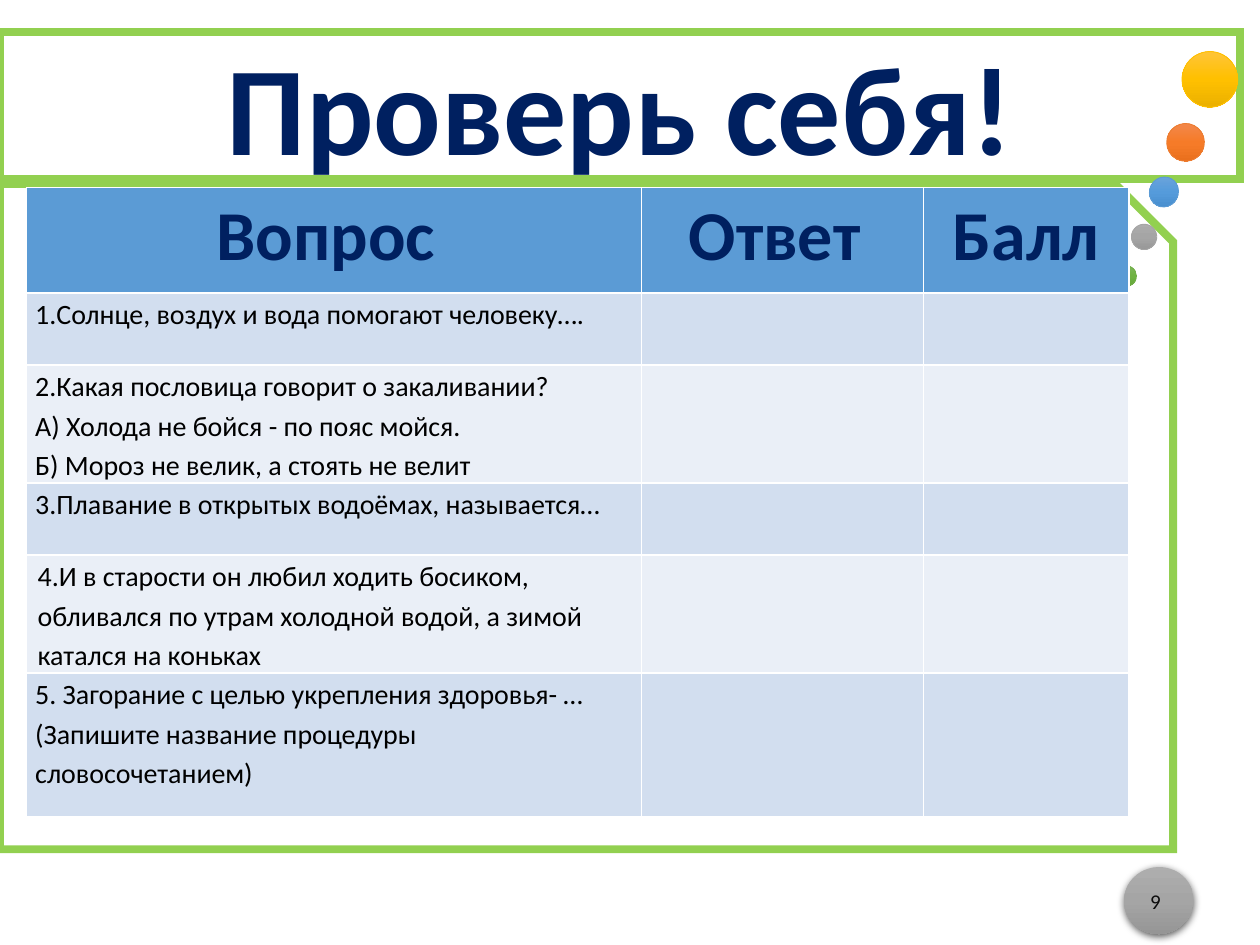
from dataclasses import dataclass

import pptx
import pptx.dml.color
import pptx.enum.shapes
import pptx.enum.text
import pptx.oxml
import pptx.oxml.ns
import pptx.util
from pptx.util import Cm

SHAPE = pptx.enum.shapes.MSO_SHAPE
ALIGN = pptx.enum.text.PP_ALIGN
ANCHOR = pptx.enum.text.MSO_ANCHOR


@dataclass(frozen=True)
class Theme:
    font: str = "Calibri"
    navy: str = "002060"
    black: str = "000000"
    page_ink: str = "0D0D0D"
    white: str = "FFFFFF"
    frame: str = "92D050"
    header: str = "5B9BD5"
    bands: tuple = ("D2DEEF", "EAEFF7")
    grey: tuple = ("AFAFAF", "A5A5A5", "939393")
    title_size: int = 72
    header_size: int = 40
    body_size: int = 16
    page_size: int = 12


THEME = Theme()

QUESTIONS = [
    ["1.Солнце, воздух и вода помогают человеку…."],
    ["2.Какая пословица говорит о закаливании?",
     "А) Холода не бойся - по пояс мойся.",
     "Б) Мороз не велик, а стоять не велит"],
    ["3.Плавание в открытых водоёмах, называется…"],
    ["4.И в старости он любил ходить босиком, обливался по утрам "
     "холодной водой, а зимой катался на коньках"],
    ["5. Загорание с целью укрепления здоровья- …",
     "(Запишите название процедуры словосочетанием)"],
]
INDENTED_QUESTION = 4
HEADINGS = ["Вопрос ", "Ответ ", "Балл"]
COLUMN_WIDTHS = [12.4, 5.69, 4.14]
ROW_HEIGHTS = [2.13, 1.45, 2.31, 1.45, 2.24, 2.9]

DOTS = [
    (23.83, 1.04, 1.12, 1.12, ("FFC64B", "FFC000", "E3AB00"), "FFC000"),
    (23.52, 2.49, 0.76, 0.76, ("F18C57", "F67B28", "E56C19"), "ED7D31"),
    (23.16, 3.58, 0.61, 0.58, ("71A6DB", "559BDB", "448ACA"), "5B9BD5"),
    (22.81, 4.52, 0.51, 0.51, THEME.grey, "A5A5A5"),
    (22.5, 5.36, 0.41, 0.41, ("81B861", "6FB242", "62A336"), "70AD47"),
]


def rgb(value):
    return pptx.dml.color.RGBColor.from_string(value)


def drawing(tag, content="", attributes=""):
    namespace = pptx.oxml.ns.nsdecls("a")
    return pptx.oxml.parse_xml(f"<a:{tag} {namespace} {attributes}>{content}</a:{tag}>")


def style_text(paragraph, size, color, bold=False, align=None):
    paragraph.alignment = align
    font = paragraph.font
    font.name = THEME.font
    font.size = pptx.util.Pt(size)
    font.bold = bold
    font.color.rgb = rgb(color)


def frame_panel(panel):
    panel.fill.solid()
    panel.fill.fore_color.rgb = rgb(THEME.white)
    panel.line.color.rgb = rgb(THEME.frame)
    panel.line.width = pptx.util.Pt(4.5)
    panel.line._get_or_add_ln().append(drawing("miter", attributes='lim="800000"'))


def add_ball(shapes, left, top, width, height, shades, rotation):
    ball = shapes.add_shape(SHAPE.FLOWCHART_CONNECTOR,
                            Cm(left), Cm(top), Cm(width), Cm(height))
    ball.rotation = rotation
    ball.shadow.inherit = False
    stops = "".join(f'<a:gs pos="{place}"><a:srgbClr val="{shade}"/></a:gs>'
                    for place, shade in zip((0, 50000, 100000), shades))
    gradient = drawing("gradFill", f'<a:gsLst>{stops}</a:gsLst><a:lin ang="5400000"/>',
                       'rotWithShape="0"')
    ball._element.spPr.find(pptx.oxml.ns.qn("a:prstGeom")).addnext(gradient)
    return ball


def add_page_badge(shapes):
    badge = add_ball(shapes, 22.66, 17.48, 1.4, 1.35, THEME.grey, 351.1)
    badge.line.fill.background()
    effects = badge._element.spPr.find(pptx.oxml.ns.qn("a:effectLst"))
    effects.append(drawing(
        "outerShdw",
        f'<a:srgbClr val="{THEME.black}"><a:alpha val="63000"/></a:srgbClr>',
        'blurRad="57150" dist="19050" dir="5400000" rotWithShape="0"'))


def add_page_number(shapes):
    number = shapes.add_textbox(Cm(17.93), Cm(17.65), Cm(5.72), Cm(1.02)).text_frame
    number.word_wrap = True
    number.vertical_anchor = ANCHOR.MIDDLE
    number.text = "9"
    style_text(number.paragraphs[0], THEME.page_size, THEME.page_ink, align=ALIGN.RIGHT)


def add_content_panel(shapes):
    panel = shapes.add_shape(SHAPE.SNIP_1_RECTANGLE, 0, Cm(3.71), Cm(23.65), Cm(13.41))
    panel.adjustments[0] = 0.087
    panel.shadow.inherit = False
    frame_panel(panel)


def place_title(shapes):
    title = shapes.title
    title.left, title.top, title.width, title.height = 0, Cm(0.64), Cm(24.99), Cm(2.97)
    snip = drawing("prstGeom", '<a:avLst><a:gd name="adj" fmla="val 42000"/></a:avLst>',
                   'prst="snip1Rect"')
    title._element.spPr.find(pptx.oxml.ns.qn("a:xfrm")).addnext(snip)
    frame_panel(title)
    words = title.text_frame
    words.text = "Проверь себя!"
    words.auto_size = pptx.enum.text.MSO_AUTO_SIZE.NONE
    words.vertical_anchor = ANCHOR.MIDDLE
    style_text(words.paragraphs[0], THEME.title_size, THEME.navy, True, ALIGN.CENTER)
    shapes._spTree.append(title._element)


def add_dots(shapes):
    trail = shapes.add_group_shape()
    for left, top, width, height, shades, outline in DOTS:
        dot = add_ball(trail.shapes, left, top, width, height, shades, 297.6)
        dot.line.color.rgb = rgb(outline)
        dot.line.width = pptx.util.Pt(0.5)


def fill_question(cell, lines, indented):
    cell.margin_left = cell.margin_right = Cm(0.18)
    cell.margin_top = cell.margin_bottom = 0
    cell.text = "\n".join(lines)
    for paragraph in cell.text_frame.paragraphs:
        if indented:
            paragraph._p.get_or_add_pPr().set("marL", str(Cm(0.05)))
        paragraph.line_spacing = 1.15
        style_text(paragraph, THEME.body_size, THEME.black)


def add_quiz_table(shapes):
    quiz = shapes.add_table(len(ROW_HEIGHTS), len(COLUMN_WIDTHS), Cm(0.53), Cm(3.78),
                            Cm(sum(COLUMN_WIDTHS)), Cm(sum(ROW_HEIGHTS))).table
    for column, width in zip(quiz.columns, COLUMN_WIDTHS):
        column.width = Cm(width)
    for index, (row, height) in enumerate(zip(quiz.rows, ROW_HEIGHTS)):
        row.height = Cm(height)
        for cell in row.cells:
            cell.fill.solid()
            band = THEME.bands[(index - 1) % 2] if index else THEME.header
            cell.fill.fore_color.rgb = rgb(band)
    for cell, heading in zip(quiz.rows[0].cells, HEADINGS):
        cell.text = heading
        style_text(cell.text_frame.paragraphs[0], THEME.header_size, THEME.navy,
                   True, ALIGN.CENTER)
    for index, lines in enumerate(QUESTIONS, start=1):
        fill_question(quiz.cell(index, 0), lines, index == INDENTED_QUESTION)


def main():
    deck = pptx.Presentation()
    deck.slide_width, deck.slide_height = Cm(25.4), Cm(19.05)
    shapes = deck.slides.add_slide(deck.slide_layouts[5]).shapes
    add_page_badge(shapes)
    add_content_panel(shapes)
    add_page_number(shapes)
    place_title(shapes)
    add_dots(shapes)
    add_quiz_table(shapes)
    deck.save("out.pptx")


if __name__ == "__main__":
    main()
